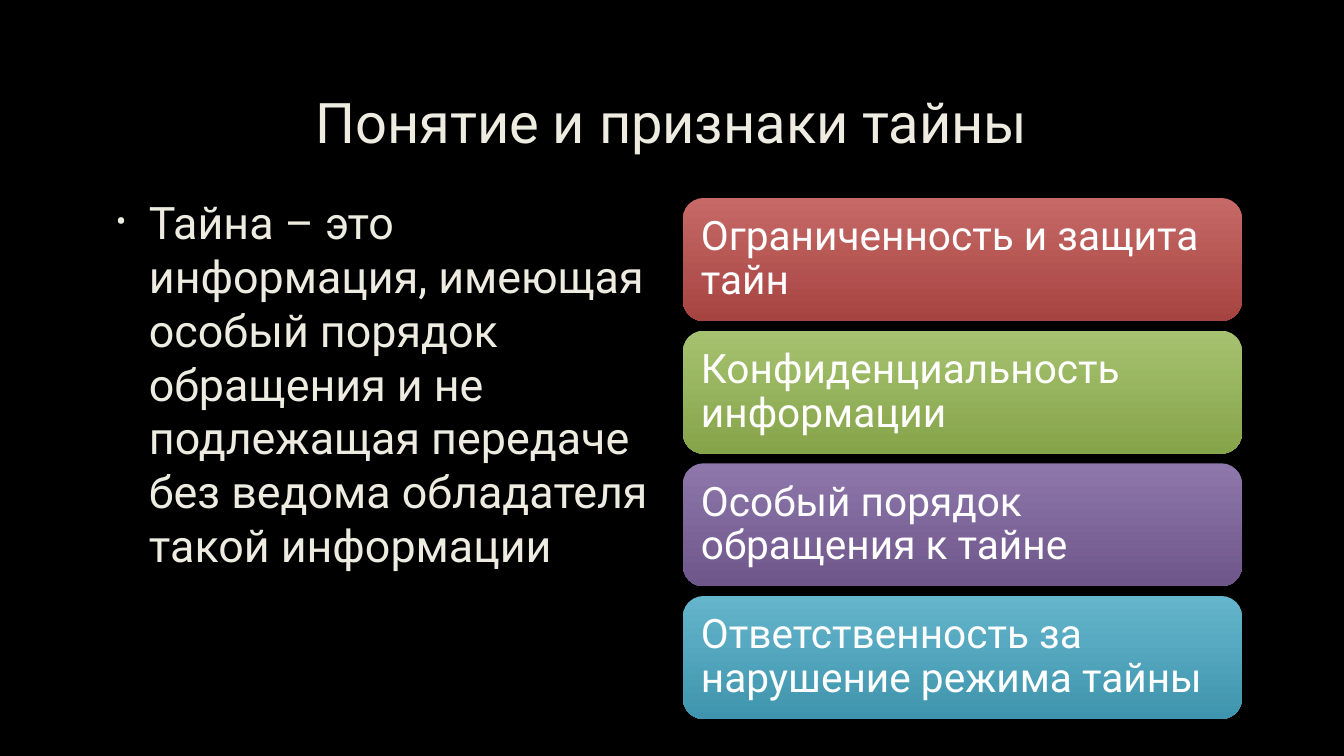
from lxml.etree import SubElement
from pptx import Presentation
from pptx.dml.color import RGBColor
from pptx.enum.shapes import MSO_SHAPE
from pptx.enum.text import MSO_ANCHOR, PP_ALIGN
from pptx.oxml.ns import qn
from pptx.util import Emu, Pt

FONT = "Roboto"
BLACK = RGBColor(0x00, 0x00, 0x00)
CREAM = RGBColor(0xEE, 0xEC, 0xE1)
WHITE = RGBColor(0xFF, 0xFF, 0xFF)
RED = RGBColor(0xC6, 0x69, 0x67), RGBColor(0xA6, 0x44, 0x41)
GREEN = RGBColor(0xA6, 0xC2, 0x70), RGBColor(0x86, 0xA4, 0x4A)
PURPLE = RGBColor(0x8E, 0x77, 0xAB), RGBColor(0x6E, 0x56, 0x8B)
BLUE = RGBColor(0x65, 0xB5, 0xCC), RGBColor(0x3E, 0x95, 0xAD)

TITLE = "Понятие и признаки тайны"
DEFINITION = (
    "Тайна – это информация, имеющая особый порядок обращения "
    "и не подлежащая передаче без ведома обладателя такой информации"
)
FEATURES = [
    ("Ограниченность и защита тайн", RED),
    ("Конфиденциальность информации", GREEN),
    ("Особый порядок обращения к тайне", PURPLE),
    ("Ответственность за нарушение режима тайны", BLUE),
]


def px(length):
    """Turn pixels, 100.8 to the inch, into EMU."""
    return Emu(round(length * 914400 / 100.8))


def write(shape, text, size, color):
    """Fill the shape with one wrapped paragraph and return the paragraph."""
    shape.text_frame.word_wrap = True
    paragraph = shape.text_frame.paragraphs[0]
    paragraph.text = text
    paragraph.font.name = FONT
    paragraph.font.size = Pt(size)
    paragraph.font.color.rgb = color
    return paragraph


def add_bullet(paragraph, indent, hanging):
    properties = paragraph._p.get_or_add_pPr()
    properties.set("marL", str(px(indent)))
    properties.set("indent", str(-px(hanging)))
    color = SubElement(properties, qn("a:buClr"))
    SubElement(color, qn("a:srgbClr"), val=str(CREAM))
    SubElement(properties, qn("a:buSzPct"), val="70000")
    SubElement(properties, qn("a:buFont"), typeface=FONT)
    SubElement(properties, qn("a:buChar"), char="•")


def add_title(slide, left, top, width, height):
    box = slide.shapes.add_textbox(px(left), px(top), px(width), px(height))
    box.text_frame.vertical_anchor = MSO_ANCHOR.MIDDLE
    write(box, TITLE, 40, CREAM).alignment = PP_ALIGN.CENTER


def add_definition(slide, left, top, width, height):
    box = slide.shapes.add_textbox(px(left), px(top), px(width), px(height))
    paragraph = write(box, DEFINITION, 32, CREAM)
    paragraph.space_before = Pt(6.4)
    paragraph.space_after = Pt(6)
    add_bullet(paragraph, 38, 33)


def add_card(slide, text, colors, left, top, width, height):
    card = slide.shapes.add_shape(
        MSO_SHAPE.ROUNDED_RECTANGLE, px(left), px(top), px(width), px(height)
    )
    card.shadow.inherit = False
    card.line.fill.background()
    card.fill.gradient()
    card.fill.gradient_angle = 270
    for stop, color in zip(card.fill.gradient_stops, colors):
        stop.color.rgb = color
    frame = card.text_frame
    frame.margin_left = frame.margin_right = px(12)
    frame.margin_top = frame.margin_bottom = px(12)
    frame.vertical_anchor = MSO_ANCHOR.MIDDLE
    paragraph = write(card, text, 29, WHITE)
    paragraph.alignment = PP_ALIGN.LEFT
    paragraph.line_spacing = 0.9


def add_features(slide, left, top, width, height):
    card_height = 123
    step = (height - card_height) / (len(FEATURES) - 1)
    for index, (text, colors) in enumerate(FEATURES):
        add_card(slide, text, colors, left, top + index * step, width, card_height)


def main():
    presentation = Presentation()
    presentation.slide_width = px(1344)
    presentation.slide_height = px(756)
    slide = presentation.slides.add_slide(presentation.slide_layouts[6])
    slide.background.fill.solid()
    slide.background.fill.fore_color.rgb = BLACK
    add_title(slide, 101, 68, 1141, 107)
    add_definition(slide, 101, 190, 558, 448)
    add_features(slide, 683, 198, 559, 521)
    presentation.save("out.pptx")


if __name__ == "__main__":
    main()
